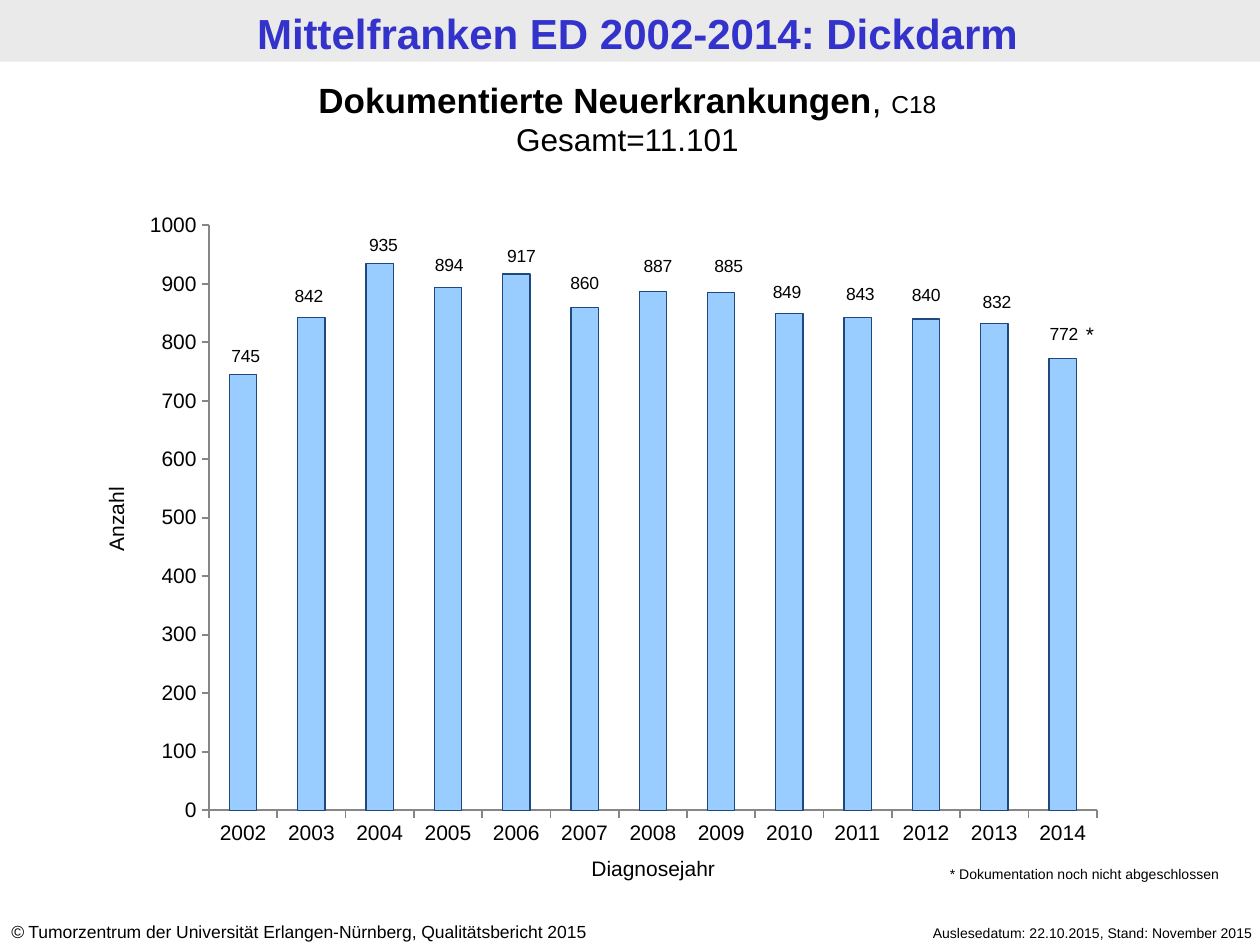
from dataclasses import dataclass

from lxml.etree import SubElement
from pptx import Presentation
from pptx.chart.data import CategoryChartData
from pptx.dml.color import RGBColor
from pptx.enum.chart import XL_CHART_TYPE, XL_LABEL_POSITION, XL_TICK_MARK
from pptx.enum.shapes import MSO_SHAPE
from pptx.enum.text import PP_ALIGN
from pptx.oxml import parse_xml
from pptx.oxml.ns import nsdecls, qn
from pptx.util import Inches, Pt

FONT = "Arial"
BLACK = RGBColor(0x00, 0x00, 0x00)
TITLE_BLUE = RGBColor(0x33, 0x33, 0xCC)
BAND_GREY = RGBColor(0xEA, 0xEA, 0xEA)
BAR_FILL = RGBColor(0x99, 0xCC, 0xFF)
BAR_LINE = RGBColor(0x1F, 0x49, 0x7D)
AXIS_GREY = RGBColor(0x86, 0x86, 0x86)

CHART_WIDTH, CHART_HEIGHT = 7.71, 5.14
PLOT_LAYOUT = {"x": 0.066, "y": 0.029, "w": 0.914, "h": 0.903}
AXIS_MAXIMUM = 1000


@dataclass(frozen=True)
class YearCount:
    """Cases of one year; the label sits label_gap inches above its bar."""
    year: int
    cases: int
    label_shift: float
    label_gap: float


@dataclass(frozen=True)
class TextRun:
    text: str
    size: float
    bold: bool = False
    italic: bool = False
    color: RGBColor = BLACK


YEAR_COUNTS = [
    YearCount(2002, 745, 0.02, 0.14),
    YearCount(2003, 842, -0.02, 0.17),
    YearCount(2004, 935, 0.03, 0.14),
    YearCount(2005, 894, 0.01, 0.17),
    YearCount(2006, 917, 0.04, 0.14),
    YearCount(2007, 860, 0.0, 0.19),
    YearCount(2008, 887, 0.04, 0.2),
    YearCount(2009, 885, 0.06, 0.21),
    YearCount(2010, 849, -0.02, 0.17),
    YearCount(2011, 843, 0.02, 0.18),
    YearCount(2012, 840, 0.0, 0.19),
    YearCount(2013, 832, 0.02, 0.17),
    YearCount(2014, 772, 0.01, 0.19),
]


def add_text(slide, left: float, top: float, width: float, height: float,
             *lines: list[TextRun], align=PP_ALIGN.LEFT, rotation: float = 0):
    """Add a text box with one paragraph per list of runs."""
    box = slide.shapes.add_textbox(Inches(left), Inches(top), Inches(width), Inches(height))
    box.rotation = rotation
    frame = box.text_frame
    frame.word_wrap = True
    for index, line in enumerate(lines):
        paragraph = frame.add_paragraph() if index else frame.paragraphs[0]
        paragraph.alignment = align
        for item in line:
            run = paragraph.add_run()
            run.text = item.text
            run.font.name = FONT
            run.font.size = Pt(item.size)
            run.font.bold = item.bold
            run.font.italic = item.italic
            run.font.color.rgb = item.color


def add_title_band(slide) -> None:
    band = slide.shapes.add_shape(MSO_SHAPE.RECTANGLE, 0, 0, Inches(10), Inches(0.49))
    band.shadow.inherit = False
    band.fill.solid()
    band.fill.fore_color.rgb = BAND_GREY
    band.line.fill.background()


def make_layout(**values: float):
    """Build a manual chart layout from fractions of the chart size."""
    layout = parse_xml(f"<c:layout {nsdecls('c')}><c:manualLayout/></c:layout>")
    for name, value in values.items():
        SubElement(layout[0], qn(f"c:{name}")).set("val", f"{value:.4f}")
    return layout


def set_plot_layout(chart) -> None:
    plot_area = chart._chartSpace.chart.plotArea
    for existing in plot_area.findall(qn("c:layout")):
        plot_area.remove(existing)
    layout = make_layout(**PLOT_LAYOUT)
    for position, (name, value) in enumerate(
            [("layoutTarget", "inner"), ("xMode", "edge"), ("yMode", "edge")]):
        mode = SubElement(layout[0], qn(f"c:{name}"))
        mode.set("val", value)
        layout[0].insert(position, mode)
    plot_area.insert(0, layout)


def hide_leader_lines(labels) -> None:
    element = labels._element
    for existing in element.findall(qn("c:showLeaderLines")):
        element.remove(existing)
    SubElement(element, qn("c:showLeaderLines")).set("val", "0")


def place_labels(series) -> None:
    """Lift each label from the middle of its bar to just above it."""
    labels = series.data_labels
    labels.show_value = True
    labels.font.size = Pt(10)
    labels.position = XL_LABEL_POSITION.CENTER
    for index, item in enumerate(YEAR_COUNTS):
        label = series.points[index].data_label
        label.font.size = Pt(10)
        label.font.name = FONT
        label.font.color.rgb = BLACK
        label.position = XL_LABEL_POSITION.CENTER
        half_bar = PLOT_LAYOUT["h"] * item.cases / AXIS_MAXIMUM / 2
        layout = make_layout(x=item.label_shift / CHART_WIDTH,
                             y=-half_bar - item.label_gap / CHART_HEIGHT)
        labels._element.findall(qn("c:dLbl"))[index].insert(1, layout)
    hide_leader_lines(labels)


def add_case_chart(slide) -> None:
    data = CategoryChartData()
    data.categories = [str(item.year) for item in YEAR_COUNTS]
    data.add_series("Neuerkrankungen", [item.cases for item in YEAR_COUNTS])
    chart = slide.shapes.add_chart(
        XL_CHART_TYPE.COLUMN_STACKED, Inches(1.15), Inches(1.64),
        Inches(CHART_WIDTH), Inches(CHART_HEIGHT), data).chart
    chart.has_legend = False
    chart.has_title = False
    chart.font.name = FONT
    chart.font.size = Pt(12)
    chart.font.color.rgb = BLACK
    set_plot_layout(chart)

    for axis in (chart.category_axis, chart.value_axis):
        axis.has_major_gridlines = False
        axis.major_tick_mark = XL_TICK_MARK.OUTSIDE
        axis.minor_tick_mark = XL_TICK_MARK.NONE
        axis.format.line.color.rgb = AXIS_GREY
        axis.format.line.width = Pt(1)
    chart.value_axis.minimum_scale = 0
    chart.value_axis.maximum_scale = AXIS_MAXIMUM
    chart.value_axis.major_unit = 100

    plot = chart.plots[0]
    plot.gap_width = 150
    plot.overlap = 100
    plot.vary_by_categories = False
    series = plot.series[0]
    series.format.fill.solid()
    series.format.fill.fore_color.rgb = BAR_FILL
    series.format.line.color.rgb = BAR_LINE
    series.format.line.width = Pt(0.75)
    place_labels(series)


def main() -> None:
    presentation = Presentation()
    presentation.slide_width = Inches(10)
    presentation.slide_height = Inches(7.5)
    slide = presentation.slides.add_slide(presentation.slide_layouts[6])

    add_title_band(slide)
    add_text(slide, 0.06, 0.01, 10, 0.49,
             [TextRun("Mittelfranken ED 2002-2014: Dickdarm", 24, bold=True, color=TITLE_BLUE)],
             align=PP_ALIGN.CENTER)
    add_text(slide, 6.65, 7.29, 3.39, 0.24,
             [TextRun("Auslesedatum: 22.10.2015, Stand: November 2015", 8)],
             align=PP_ALIGN.RIGHT)
    add_text(slide, -0.01, 7.26, 5.24, 0.27,
             [TextRun("©", 10, italic=True),
              TextRun(" Tumorzentrum der Universität Erlangen-Nürnberg, Qualitätsbericht 2015", 10)])
    add_case_chart(slide)
    add_text(slide, -0.04, 0.57, 10.04, 0.74,
             [TextRun("Dokumentierte Neuerkrankungen", 20, bold=True),
              TextRun(", ", 20), TextRun("C18", 14)],
             [TextRun("Gesamt=11.101", 18)], align=PP_ALIGN.CENTER)
    add_text(slide, 4.06, 6.74, 2.25, 0.3, [TextRun("Diagnosejahr", 12)], align=PP_ALIGN.CENTER)
    add_text(slide, 0.31, 3.97, 1.22, 0.3, [TextRun("Anzahl", 12)],
             align=PP_ALIGN.CENTER, rotation=270)
    add_text(slide, 8.39, 2.5, 0.39, 0.3, [TextRun("*", 12)], align=PP_ALIGN.RIGHT)
    add_text(slide, 7.44, 6.82, 2.44, 0.24,
             [TextRun("* Dokumentation noch nicht abgeschlossen", 8)])
    presentation.save("out.pptx")


if __name__ == "__main__":
    main()
